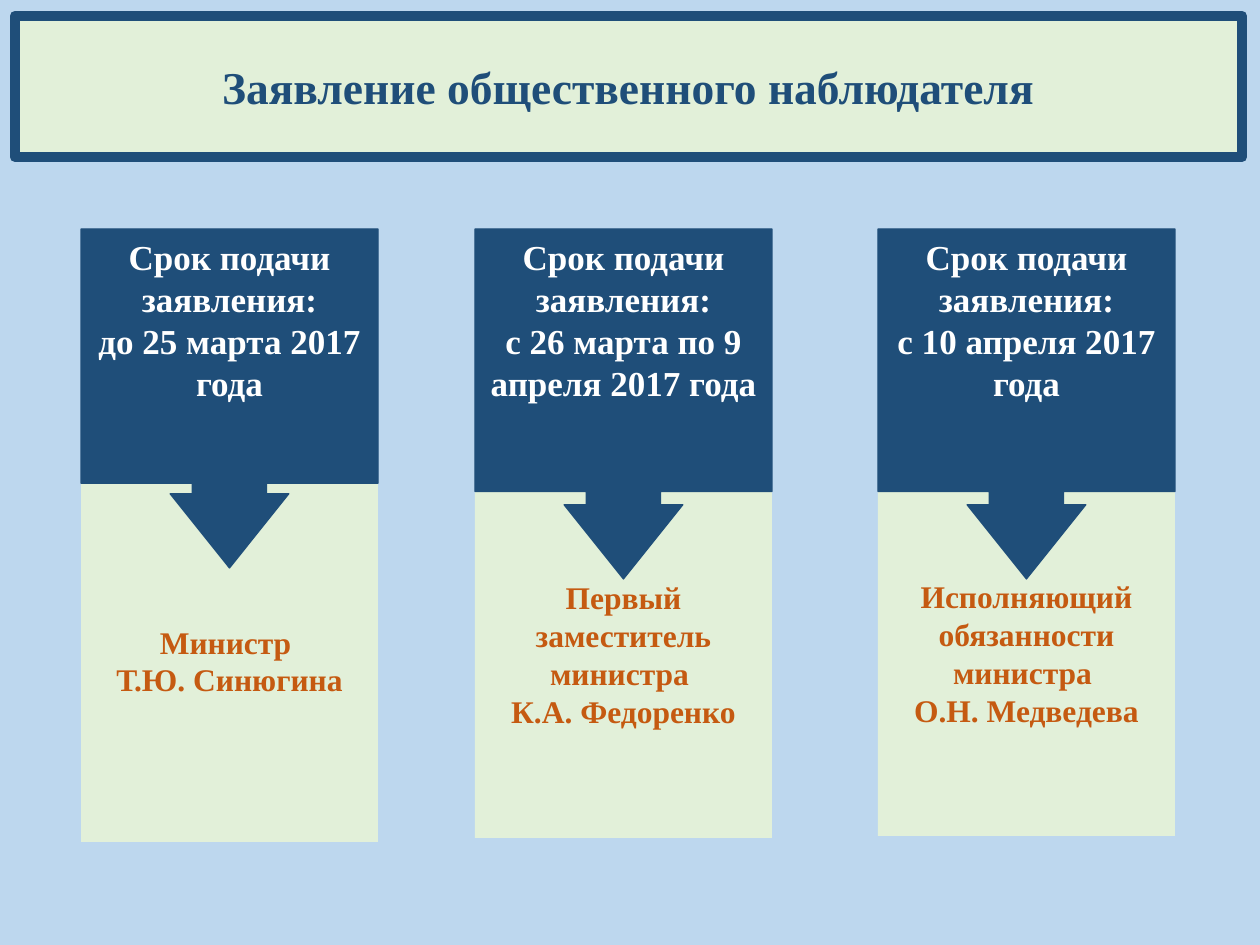
from dataclasses import dataclass

from pptx import Presentation
from pptx.dml.color import RGBColor as Rgb
from pptx.enum.shapes import MSO_SHAPE as Shape
from pptx.enum.text import MSO_ANCHOR as Anchor, MSO_AUTO_SIZE as AutoSize, PP_ALIGN as Align
from pptx.util import Pt

PX = 914400 // 126  # EMU in one px


@dataclass(frozen=True)
class Theme:
    sky: Rgb = Rgb.from_string("BDD7EE")
    navy: Rgb = Rgb.from_string("1F4E79")
    mint: Rgb = Rgb.from_string("E2F0D9")
    rust: Rgb = Rgb.from_string("C55A11")
    white: Rgb = Rgb.from_string("FFFFFF")
    font: str = "Times New Roman"
    title_size: int = 26
    term_size: int = 20
    official_size: int = 18


THEME = Theme()
COLUMN_WIDTH, TERM_TOP = 297, 229
BELOW_ARROW = 82  # top inset that moves an official's text clear of the arrow

# left, term height, official top, official height, official inset, term, official
COLUMNS = [
    (81, 339, 479, 363, 6, "до 25 марта 2017 года",
     ["Министр ", "Т.Ю. Синюгина"]),
    (475, 350, 394, 444, BELOW_ARROW, "с 26 марта по 9 апреля 2017 года",
     ["Первый заместитель министра ", "К.А. Федоренко"]),
    (878, 350, 394, 442, BELOW_ARROW, "с 10 апреля 2017 года",
     ["Исполняющий обязанности министра ", "О.Н. Медведева"]),
]


def add_panel(slide, preset, box, fill, border=None, border_width=0):
    panel = slide.shapes.add_shape(preset, *(length * PX for length in box))
    panel.shadow.inherit = False
    panel.fill.solid()
    panel.fill.fore_color.rgb = fill
    if border is None:
        panel.line.fill.background()
    else:
        panel.line.color.rgb = border
        panel.line.width = Pt(border_width)
    return panel


def write_lines(panel, lines, size, color, **frame_format):
    frame = panel.text_frame
    frame_format = {"word_wrap": True, "vertical_anchor": Anchor.MIDDLE, **frame_format}
    for name, value in frame_format.items():
        setattr(frame, name, value)
    font_format = {"name": THEME.font, "size": Pt(size), "bold": True}
    for index, line in enumerate(lines):
        paragraph = frame.add_paragraph() if index else frame.paragraphs[0]
        paragraph.alignment = Align.CENTER
        run = paragraph.add_run()
        run.text = line
        for name, value in font_format.items():
            setattr(run.font, name, value)
        run.font.color.rgb = color


def add_heading(slide, heading):
    banner = add_panel(slide, Shape.RECTANGLE, (15, 16, 1227, 141),
                       THEME.mint, THEME.navy, 6)
    write_lines(banner, [heading], THEME.title_size, THEME.navy)


def add_official(slide, box, lines, inset):
    official = add_panel(slide, Shape.RECTANGLE, box, THEME.mint)
    write_lines(official, lines, THEME.official_size, THEME.rust, margin_top=inset * PX)


def add_term(slide, box, term):
    callout = add_panel(slide, Shape.DOWN_ARROW_CALLOUT, box,
                        THEME.navy, THEME.navy, 0.75)
    for index, share in enumerate((0.25, 0.2, 0.25, 0.75)):
        callout.adjustments[index] = share
    write_lines(callout, ["Срок подачи заявления:", term], THEME.term_size, THEME.white,
                vertical_anchor=Anchor.TOP, auto_size=AutoSize.SHAPE_TO_FIT_TEXT)


def main():
    deck = Presentation()
    deck.slide_width, deck.slide_height = 1260 * PX, 945 * PX
    slide = deck.slides.add_slide(deck.slide_layouts[6])
    slide.background.fill.solid()
    slide.background.fill.fore_color.rgb = THEME.sky

    # Heading
    add_heading(slide, "Заявление общественного наблюдателя")

    # Filing terms, each pointing to the official who receives the statement
    for left, term_height, top, height, inset, term, official in COLUMNS:
        add_official(slide, (left, top, COLUMN_WIDTH, height), official, inset)
        add_term(slide, (left, TERM_TOP, COLUMN_WIDTH, term_height), term)

    deck.save("out.pptx")


if __name__ == "__main__":
    main()
